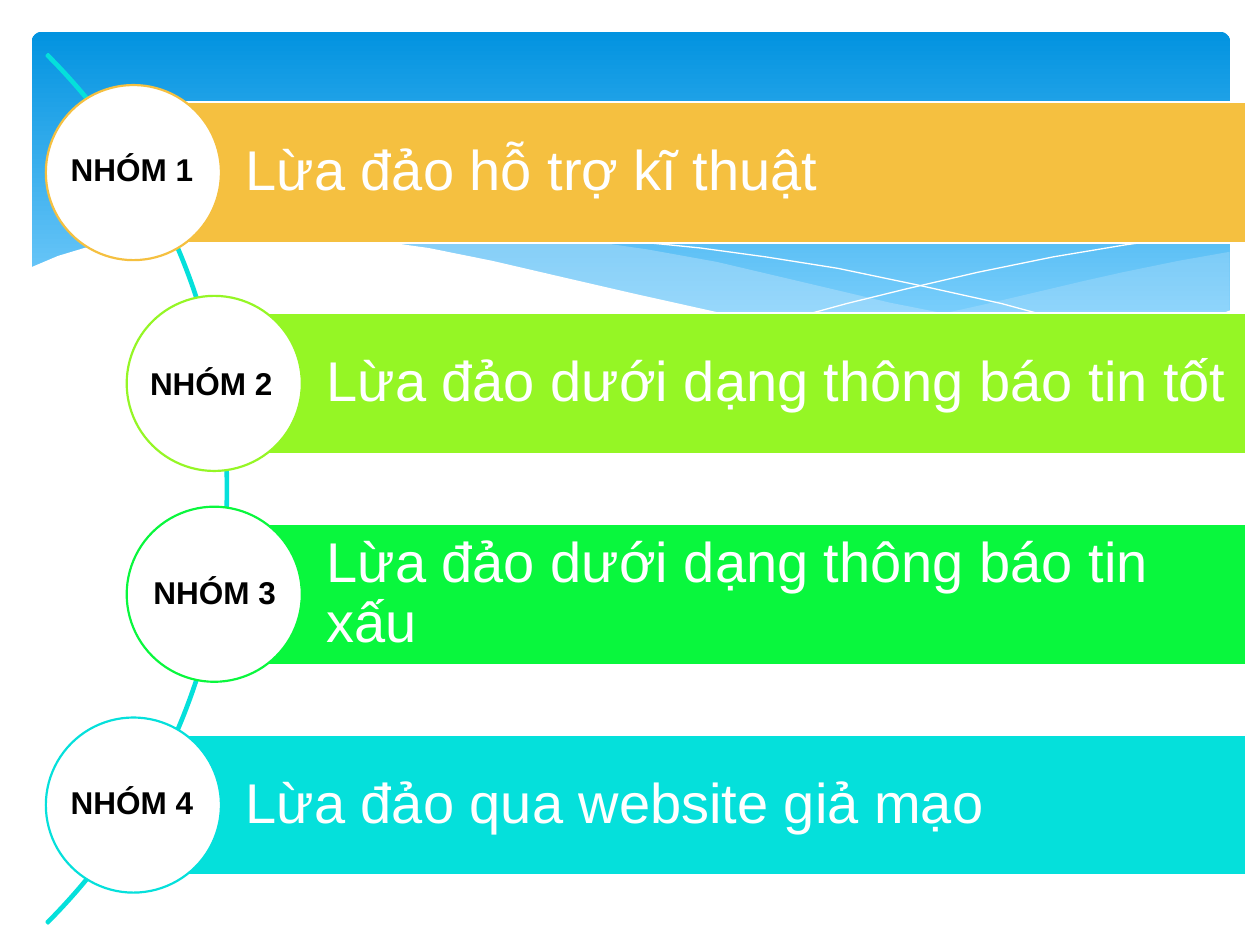
from dataclasses import dataclass
from typing import Optional

from lxml import etree
from pptx import Presentation
from pptx import util as u
from pptx.dml.color import RGBColor
from pptx.enum import shapes, text
from pptx.oxml.ns import qn

Points = list[tuple[float, float]]

WHITE, BLACK, WAVE_BLUE, ARC_CYAN = "FFFFFF", "000000", "C6E7FC", "05E0DB"
BAR_RIGHT, BAR_HEIGHT = 25.12, 2.84
FIRST_TOP, PITCH = 2.06, 4.25
CIRCLE_SIZE = 3.53
OUTER_LEFT, INNER_LEFT = 2.69, 4.32
EDGE = 1.25

TITLE_FONT = {"name": "Arial", "size": u.Pt(32), "bold": False}
LABEL_FONT = {"name": "Arial", "size": u.Pt(18), "bold": True}


@dataclass
class Group:
    label: str
    title: str
    color: str
    left: float
    label_at: tuple[float, float]


@dataclass
class Wave:
    points: Points
    fill: Optional[str] = None
    opacity: int = 100
    line: Optional[str] = None


GROUPS = [
    Group("NHÓM 1", "Lừa đảo hỗ trợ kĩ thuật", "F5C040", OUTER_LEFT, (0.97, 2.9)),
    Group("NHÓM 2", "Lừa đảo dưới dạng thông báo tin tốt", "95F625", INNER_LEFT, (2.57, 7.21)),
    Group("NHÓM 3", "Lừa đảo dưới dạng thông báo tin xấu", "09F73D", INNER_LEFT, (2.64, 11.43)),
    Group("NHÓM 4", "Lừa đảo qua website giả mạo", "05E0DB", OUTER_LEFT, (0.97, 15.67)),
]

# Header waves, back to front, points in centimetres
WAVES = [
    Wave([(24.77, 5.08), (23.75, 5.26), (22.63, 5.49), (21.87, 5.66), (19.79, 6.15),
          (18.52, 6.43), (16.79, 6.73), (17.91, 6.88), (18.92, 6.99), (20.4, 7.06),
          (21.69, 7.01), (22.78, 6.86), (23.75, 6.65), (24.79, 6.27), (24.79, 5.08)],
         fill=WAVE_BLUE, opacity=29),
    Wave([(22.68, 6.93), (21.26, 6.73), (19.69, 6.45), (17.93, 6.1), (15.98, 5.64),
          (14.45, 5.28), (13.06, 5.03), (11.81, 4.85), (10.67, 4.75), (9.17, 4.7),
          (7.95, 4.78), (7.26, 4.85), (8.69, 5.05), (10.26, 5.36), (11.4, 5.64),
          (13.46, 6.1), (15.27, 6.48), (16.89, 6.76), (18.34, 6.96), (19.63, 7.04),
          (21.03, 7.06)],
         fill=WAVE_BLUE, opacity=40),
    Wave([(7.85, 4.95), (8.74, 4.83), (9.83, 4.75), (11, 4.75), (12.42, 4.83), (14.12, 5),
          (15.44, 5.18), (16.89, 5.41), (18.47, 5.74), (20.19, 6.12), (22.07, 6.63),
          (23.04, 6.91)], line=WHITE),
    Wave([(15.57, 6.53), (17.07, 6.12), (18.29, 5.82), (19.71, 5.49), (21.23, 5.18),
          (22.73, 4.93), (23.83, 4.78), (24.77, 4.7)], line=WHITE),
    Wave([(24.82, 6.25), (24.13, 6.5), (23.37, 6.73), (22.53, 6.88), (21.59, 6.99),
          (20.55, 7.04), (19.33, 6.99), (17.98, 6.86), (16.46, 6.65), (14.71, 6.35),
          (12.78, 5.92), (11.35, 5.59), (9.93, 5.26), (8.64, 5), (7.42, 4.83),
          (6.35, 4.72), (5.36, 4.67), (4.5, 4.67), (3.35, 4.72), (2.41, 4.85),
          (1.7, 5), (1.17, 5.16), (0.58, 5.41), (0.58, 8.36), (24.82, 8.36)],
         fill=WHITE),
]


def rgb(value: str) -> RGBColor:
    return RGBColor.from_string(value)


def paint(shape, fill: Optional[str] = None, line: Optional[str] = None,
          width: float = EDGE) -> None:
    shape.shadow.inherit = False
    if fill:
        shape.fill.solid()
        shape.fill.fore_color.rgb = rgb(fill)
    else:
        shape.fill.background()
    if line:
        shape.line.color.rgb = rgb(line)
        shape.line.width = u.Pt(width)
    else:
        shape.line.fill.background()


def add_preset(page, kind, left: float, top: float, width: float, height: float):
    return page.shapes.add_shape(kind, u.Cm(left), u.Cm(top), u.Cm(width), u.Cm(height))


def write(box, words: str, formats: dict, color: str, align) -> None:
    para = box.text_frame.paragraphs[0]
    para.alignment = align
    span = para.add_run()
    span.text = words
    for name, value in formats.items():
        setattr(span.font, name, value)
    span.font.color.rgb = rgb(color)


def draw_header(page) -> None:
    panel = add_preset(page, shapes.MSO_SHAPE.ROUNDED_RECTANGLE, 0.64, 0.64, 24.16, 6.86)
    panel.adjustments[0] = 0.03
    paint(panel)
    panel.fill.gradient()
    panel.fill.gradient_angle = 270
    stops = zip(panel.fill.gradient_stops, ((0, "0293E0"), (0.9, "83D3FE")))
    for stop, (position, color) in stops:
        stop.position = position
        stop.color.rgb = rgb(color)


def draw_wave(page, wave: Wave) -> None:
    corners = [(u.Cm(x), u.Cm(y)) for x, y in wave.points]
    builder = page.shapes.build_freeform(*corners[0])
    builder.add_line_segments(corners[1:], close=wave.fill is not None)
    shape = builder.convert_to_shape()
    paint(shape, wave.fill, wave.line, width=0)
    if wave.opacity < 100:
        color = shape.fill._xPr.find(qn("a:solidFill"))[0]
        etree.SubElement(color, qn("a:alpha"), val=str(wave.opacity * 1000))


def draw_arc(page) -> None:
    arc = add_preset(page, shapes.MSO_SHAPE.BLOCK_ARC, -20.19, -2.54, 24.79, 24.79)
    # Angles are in units of 100000/60000 degree; the last value is the thickness
    for index, value in enumerate((189, 27, 0.002)):
        arc.adjustments[index] = value
    paint(arc, line=ARC_CYAN)


def draw_group(page, group: Group, top: float) -> None:
    bar = add_preset(page, shapes.MSO_SHAPE.RECTANGLE, group.left, top,
                     BAR_RIGHT - group.left, BAR_HEIGHT)
    paint(bar, group.color, WHITE)
    frame = {"word_wrap": True, "vertical_anchor": text.MSO_ANCHOR.MIDDLE,
             "margin_left": u.Cm(2.26), "margin_right": u.Cm(0.23),
             "margin_top": u.Cm(0.23), "margin_bottom": u.Cm(0.23)}
    for name, value in frame.items():
        setattr(bar.text_frame, name, value)
    write(bar, group.title, TITLE_FONT, WHITE, text.PP_ALIGN.LEFT)
    bar.text_frame.paragraphs[0].line_spacing = 0.9

    # The circle is centred on the bar's left side
    circle = add_preset(page, shapes.MSO_SHAPE.OVAL, group.left - CIRCLE_SIZE / 2,
                        top + (BAR_HEIGHT - CIRCLE_SIZE) / 2, CIRCLE_SIZE, CIRCLE_SIZE)
    paint(circle, WHITE, group.color)


def draw_label(page, group: Group) -> None:
    left, top = group.label_at
    box = page.shapes.add_textbox(u.Cm(left), u.Cm(top), u.Cm(3.38), u.Cm(1.02))
    box.text_frame.word_wrap = True
    box.text_frame.auto_size = text.MSO_AUTO_SIZE.SHAPE_TO_FIT_TEXT
    write(box, group.label, LABEL_FONT, BLACK, text.PP_ALIGN.CENTER)


def main() -> None:
    deck = Presentation()
    deck.slide_width, deck.slide_height = u.Cm(25.4), u.Cm(19.05)
    page = deck.slides.add_slide(deck.slide_layouts[6])

    # Background header
    draw_header(page)
    for wave in WAVES:
        draw_wave(page, wave)

    # Curved list
    draw_arc(page)
    for index, group in enumerate(GROUPS):
        draw_group(page, group, FIRST_TOP + index * PITCH)
    for group in GROUPS:
        draw_label(page, group)

    deck.save("out.pptx")


if __name__ == "__main__":
    main()
